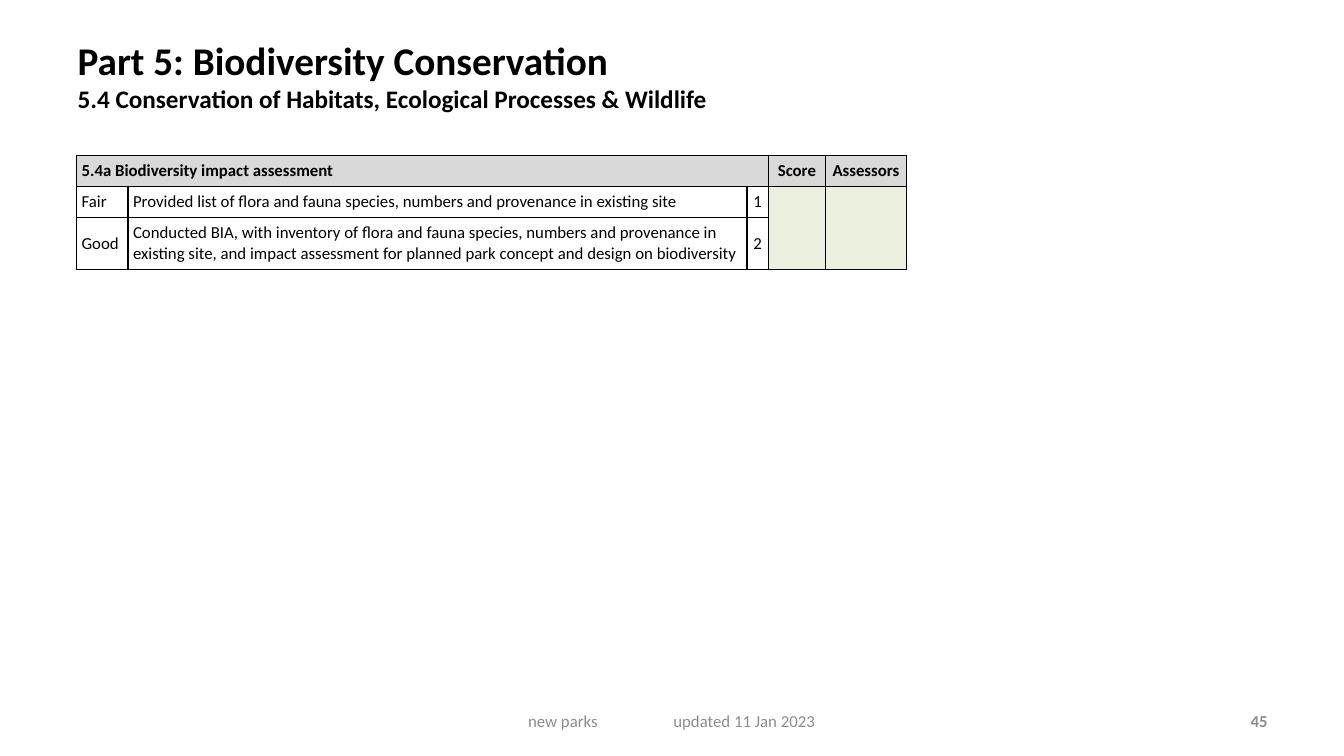
from copy import deepcopy

from lxml import etree
from pptx import Presentation
from pptx import util as u
from pptx.dml.color import RGBColor
from pptx.enum import text as t
from pptx.oxml.ns import qn

PX = 9144
FONT = "Calibri"
COLORS = {"ink": "000000", "muted": "8C8C8C", "header": "D9D9D9", "entry": "EBF1DE"}
LEFT, CENTER, RIGHT = t.PP_ALIGN.LEFT, t.PP_ALIGN.CENTER, t.PP_ALIGN.RIGHT

COLUMN_WIDTHS = [51, 614, 21, 57, 80]
ROW_HEIGHTS = [31, 31, 51]
CRITERIA = [
    ["5.4a Biodiversity impact assessment", "", "", "Score", "Assessors"],
    ["Fair", "Provided list of flora and fauna species, numbers and provenance "
     "in existing site", "1", "", ""],
    ["Good", "Conducted BIA, with inventory of flora and fauna species, numbers and "
     "provenance in existing site, and impact assessment for planned park concept "
     "and design on biodiversity", "2", "", ""],
]
MERGES = [((0, 0), (0, 2)), ((1, 3), (2, 3)), ((1, 4), (2, 4))]


def px(length):
    """Turn px into EMU."""
    return u.Emu(length * PX)


def write(paragraph, content, size=12, color="ink", bold=False, align=LEFT):
    """Add a formatted run to a paragraph and return it."""
    paragraph.alignment = align
    run = paragraph.add_run()
    run.text = content
    run.font.name = FONT
    run.font.size = u.Pt(size)
    run.font.bold = bold
    run.font.color.rgb = RGBColor.from_string(COLORS[color])
    return run


def add_heading(slide, part, section):
    """Fill the title placeholder with the part and its section."""
    heading = slide.shapes.title
    heading.left, heading.top, heading.width, heading.height = map(px, (67, 31, 1036, 99))
    frame = heading.text_frame
    frame.auto_size = t.MSO_AUTO_SIZE.NONE
    frame.vertical_anchor = t.MSO_ANCHOR.TOP
    line = frame.paragraphs[0]
    part_run = write(line, part, size=28, bold=True)
    line._p.add_br().append(deepcopy(part_run._r.rPr))
    write(line, section, size=18, bold=True)


def add_footer(slide, content, left, width, tab=None, **style):
    """Add one footer text, with an optional tab stop in px."""
    footer = slide.shapes.add_textbox(px(left), px(695), px(width), px(40))
    frame = footer.text_frame
    frame.word_wrap = True
    frame.vertical_anchor = t.MSO_ANCHOR.MIDDLE
    paragraph = frame.paragraphs[0]
    if tab:
        stops = etree.SubElement(paragraph._p.get_or_add_pPr(), qn("a:tabLst"))
        etree.SubElement(stops, qn("a:tab"), pos=str(px(tab)), algn="l")
    write(paragraph, content, color="muted", **style)


def add_borders(cell):
    """Draw a thin line on all sides of a cell."""
    properties = cell._tc.get_or_add_tcPr()
    for side in "LRTB":
        border = etree.SubElement(properties, qn(f"a:ln{side}"), w=str(u.Pt(1)))
        fill = etree.SubElement(border, qn("a:solidFill"))
        etree.SubElement(fill, qn("a:srgbClr"), val=COLORS["ink"])


def format_cell(cell, content, row, column):
    """Write and colour a cell by its place in the table."""
    cell.vertical_anchor = t.MSO_ANCHOR.MIDDLE
    cell.margin_left = cell.margin_right = cell.margin_top = cell.margin_bottom = px(5)
    add_borders(cell)
    fill = "header" if row == 0 else "entry" if column >= 3 else None
    if fill:
        cell.fill.solid()
        cell.fill.fore_color.rgb = RGBColor.from_string(COLORS[fill])
    else:
        cell.fill.background()
    paragraph = cell.text_frame.paragraphs[0]
    if content:
        write(paragraph, content, bold=row == 0, align=CENTER if column >= 2 else LEFT)
    else:
        etree.SubElement(paragraph._p, qn("a:endParaRPr"), sz="1200")


def add_criteria(slide):
    """Add the table of assessment criteria."""
    frame = slide.shapes.add_table(len(ROW_HEIGHTS), len(COLUMN_WIDTHS), px(76), px(154),
                                   px(sum(COLUMN_WIDTHS)), px(sum(ROW_HEIGHTS)))
    criteria = frame.table
    criteria.first_row = criteria.horz_banding = False
    for column, width in zip(criteria.columns, COLUMN_WIDTHS):
        column.width = px(width)
    for row, height in zip(criteria.rows, ROW_HEIGHTS):
        row.height = px(height)
    for row, contents in enumerate(CRITERIA):
        for column, content in enumerate(contents):
            format_cell(criteria.cell(row, column), content, row, column)
    for first, last in MERGES:
        criteria.cell(*first).merge(criteria.cell(*last))


def main():
    """Build the slide and save it."""
    deck = Presentation()
    deck.slide_width, deck.slide_height = px(1333), px(750)
    slide = deck.slides.add_slide(deck.slide_layouts[5])
    add_footer(slide, "45", 956, 311, bold=True, align=RIGHT)
    add_heading(slide, "Part 5: Biodiversity Conservation",
                "5.4 Conservation of Habitats, Ecological Processes & Wildlife")
    add_criteria(slide)
    add_footer(slide, "new parks\tupdated 11 Jan 2023", 514, 310, tab=144)
    deck.save("out.pptx")


if __name__ == "__main__":
    main()
